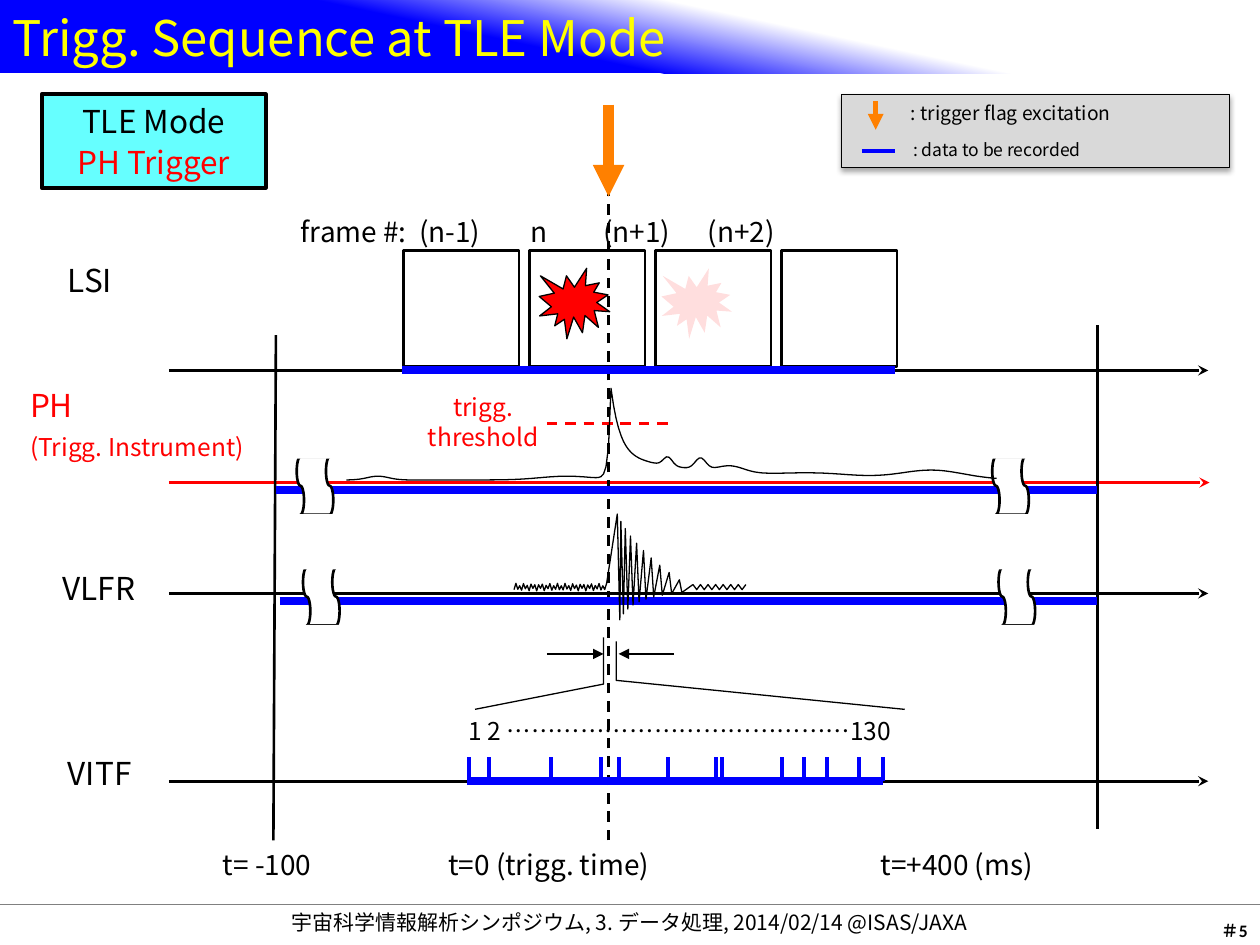
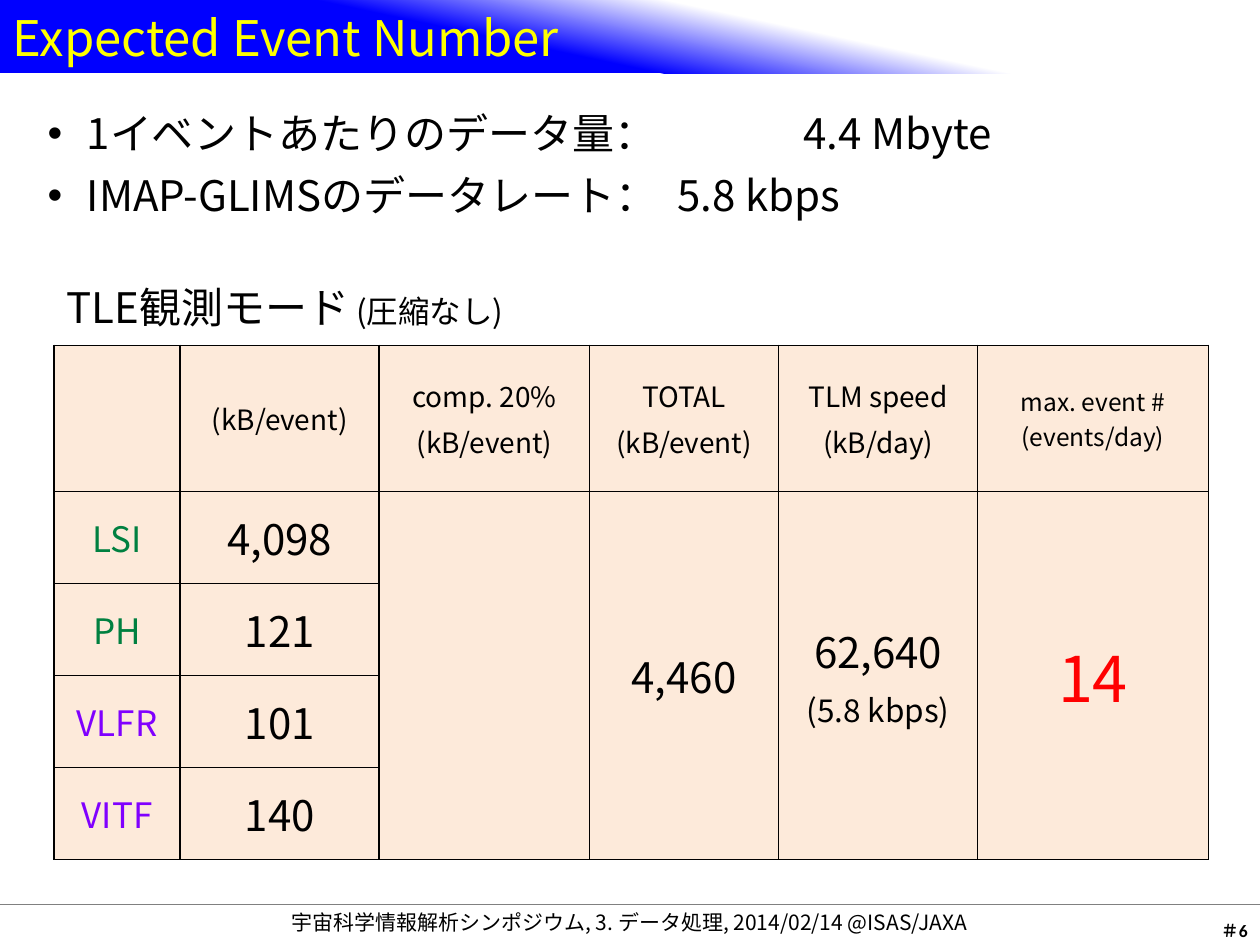
from math import exp, sin

from lxml import etree
from pptx import Presentation
from pptx.dml.color import RGBColor
from pptx.enum.dml import MSO_LINE
from pptx.enum.shapes import MSO_CONNECTOR, MSO_SHAPE
from pptx.enum.text import MSO_ANCHOR, PP_ALIGN
from pptx.oxml.ns import qn
from pptx.util import Inches, Pt

RECT, SEAL = MSO_SHAPE.RECTANGLE, MSO_SHAPE.EXPLOSION1
TAPE = MSO_SHAPE.FLOWCHART_PUNCHED_TAPE
STRAIGHT, DASH = MSO_CONNECTOR.STRAIGHT, MSO_LINE.DASH
LEFT, CENTER, RIGHT = PP_ALIGN.LEFT, PP_ALIGN.CENTER, PP_ALIGN.RIGHT
MIDDLE = MSO_ANCHOR.MIDDLE

FONT = "Noto Sans CJK JP"
LEAD = 1.22  # line height of a text box, as a share of the font size
BLACK, WHITE, RED, BLUE = "000000", "FFFFFF", "FF0000", "0000FF"
ORANGE, YELLOW, GREEN, PURPLE = "FF8000", "FFFF00", "008040", "8000FF"
PEACH, CYAN, GRAY, SILVER = "FDEADA", "66FFFF", "808080", "D9D9D9"
FOOTER = "宇宙科学情報解析シンポジウム, 3. データ処理, 2014/02/14 @ISAS/JAXA"
TITLES = {5: "Trigg. Sequence at TLE Mode", 6: "Expected Event Number"}
rgb = RGBColor.from_string


def paint(shape, fill, edge=None, width=0.75):
    """Give a shape a flat fill and line; None leaves either out."""
    shape.shadow.inherit = False
    if fill:
        shape.fill.solid()
        shape.fill.fore_color.rgb = rgb(fill)
    else:
        shape.fill.background()
    if edge:
        shape.line.color.rgb = rgb(edge)
        shape.line.width = Pt(width)
    else:
        shape.line.fill.background()


def write(frame, rows, align=LEFT, lead=LEAD, gap=0, face=FONT):
    """Fill a frame with rows of (text, size, colour), one paragraph each."""
    frame.word_wrap = True
    frame.text = "\n".join(row[0] for row in rows)
    for i, (para, (_, size, tint)) in enumerate(zip(frame.paragraphs, rows)):
        para.alignment = align
        if lead:
            para.line_spacing = Pt(round(size * lead, 1))
        if i and gap:
            para.space_before = Pt(gap)
        for run in para.runs:
            run.font.size = Pt(size)
            run.font.name = face
            run.font.color.rgb = rgb(tint)
            etree.SubElement(run.font._element, qn("a:ea"), typeface=face)


prs = Presentation()
prs.slide_width, prs.slide_height = Inches(10), Inches(7.5)

# Title band and footer on both slides
slides = []
for page, name in TITLES.items():
    slide = prs.slides.add_slide(prs.slide_layouts[5])
    shapes = slide.shapes
    slides.append(slide)

    number = shapes.add_textbox(Inches(7.19), Inches(7.25), Inches(2.81), Inches(0.27))
    write(number.text_frame, [(f"＃{page}", 10, BLACK)], RIGHT, face="Calibri")
    number.text_frame.paragraphs[0].runs[0].font.bold = True
    rule = shapes.add_connector(STRAIGHT, 0, Inches(7.18), Inches(10), Inches(7.18))
    rule.line.color.rgb = rgb(GRAY)
    rule.line.width = Pt(0.75)
    etree.SubElement(rule._element.spPr, qn("a:effectLst"))
    foot = shapes.add_textbox(Inches(0.33), Inches(7.17), Inches(9.33), Inches(0.3))
    write(foot.text_frame, [(FOOTER, 12, BLACK)], CENTER)

    band = shapes.add_shape(RECT, 0, 0, Inches(10), Inches(0.58))
    paint(band, None)
    band.fill.gradient()
    band.fill.gradient_angle = 78
    for stop, (spot, tint) in zip(band.fill.gradient_stops, [(0.41, BLUE), (0.63, WHITE)]):
        stop.position = spot
        stop.color.rgb = rgb(tint)

    title = shapes.title
    title.left, title.top = Inches(0), Inches(0)
    title.width, title.height = Inches(6.45), Inches(0.57)
    title.text_frame.vertical_anchor = MIDDLE
    write(title.text_frame, [(name, 28, YELLOW)])
    shapes._spTree.append(title._element)

# Slide 5: one time axis per instrument, all sharing the trigger time
shapes = slides[0].shapes
LSI, PH, VLFR, VITF = 2.94, 3.83, 4.71, 6.2  # heights of the axes
START, ZERO, END = 2.19, 4.83, 8.71          # t = -100, 0 and +400 ms

# Camera frames, with the flash and its afterglow
for i in range(4):
    box = shapes.add_shape(RECT, Inches(3.2 + i), Inches(1.99), Inches(0.92), Inches(0.92))
    paint(box, WHITE, BLACK, 1.5)
for x, edge in ((4.28, BLACK), (5.25, None)):
    flash = shapes.add_shape(SEAL, Inches(x), Inches(2.13), Inches(0.56), Inches(0.56))
    paint(flash, RED, edge)
glow = flash._element.spPr.find(qn("a:solidFill"))[0]
etree.SubElement(glow, qn("a:alpha"), val="13000")

mode = shapes.add_shape(RECT, Inches(0.33), Inches(0.75), Inches(1.78), Inches(0.74))
paint(mode, CYAN, BLACK, 2.25)
write(mode.text_frame, [("TLE Mode", 18, BLACK), ("PH Trigger", 18, RED)], CENTER, gap=1.8)

legend = shapes.add_shape(RECT, Inches(6.68), Inches(0.75), Inches(3.08), Inches(0.58))
paint(legend, SILVER, BLACK)
shade = etree.SubElement(
    legend._element.spPr.find(qn("a:effectLst")), qn("a:outerShdw"),
    blurRad=str(Pt(3.1)), dist=str(Pt(1.8)), dir="5400000", rotWithShape="0")
dark = etree.SubElement(shade, qn("a:srgbClr"), val=BLACK)
etree.SubElement(dark, qn("a:alpha"), val="35000")

# Straight lines as x1, y1, x2, y2, grouped by what they mean
axes = [(1.34, y, 9.59, y) for y in (LSI, VLFR, VITF)]
trigger = [(1.34, PH, 9.6, PH)]
limits = [(START, 2.66, START - 0.02, 6.67), (END, 2.58, END, 6.58)]
zero = [(ZERO, 6.67, ZERO, 1.42)]
level = [(4.34, 3.36, 5.35, 3.36)]
records = [(3.19, LSI, 7.1, LSI), (START, PH + 0.06, END, PH + 0.06),
           (START + 0.03, VLFR + 0.06, END, VLFR + 0.06), (3.71, VITF, 7.01, VITF)]
pulses = (3.72, 3.88, 4.37, 4.77, 4.91, 5.3, 5.68, 5.73, 6.21, 6.38, 6.56, 6.82, 7.01)
ticks = [(x, VITF - 0.19, x, VITF) for x in pulses]
flag = [(ZERO, 0.83, ZERO, 1.56)]
window = [(4.34, 5.19, 4.79, 5.19), (5.35, 5.19, 4.91, 5.19)]
keys = [(6.95, 0.8, 6.95, 1.03)], [(6.84, 1.2, 7.1, 1.2)]
styles = [
    (axes, BLACK, 1.5, "stealth", None),
    (trigger, RED, 1.5, "stealth", None),
    (zero, BLACK, 1.5, None, DASH),
    (limits, BLACK, 1.5, None, None),
    (level, RED, 1.5, None, DASH),
    (records, BLUE, 4.5, None, None),
    (ticks + keys[1], BLUE, 2.25, None, None),
    (flag, ORANGE, 6, "triangle", None),
    (keys[0], ORANGE, 3, "triangle", None),
    (window, BLACK, 0.75, "triangle", None),
]
for group, tint, width, head, dash in styles:
    for ends in group:
        wire = shapes.add_connector(STRAIGHT, *map(Inches, ends))
        wire.line.color.rgb = rgb(tint)
        wire.line.width = Pt(width)
        if dash:
            wire.line.dash_style = dash
        if head:
            etree.SubElement(wire.line._get_or_add_ln(), qn("a:tailEnd"), type=head)
        etree.SubElement(wire._element.spPr, qn("a:effectLst"))

# Breaks in the axes: a tape whose two ends are masked
for left, axis in ((2.27, PH), (2.32, VLFR)):
    for x in (left, left + 5.52):
        y = axis - 0.12
        tape = shapes.add_shape(TAPE, Inches(x), Inches(y), Inches(0.46), Inches(0.29))
        tape.rotation = 90
        paint(tape, WHITE, BLACK, 1.5)
        for dx, dy in ((0.01, -0.21), (0.08, 0.37)):
            mask = shapes.add_shape(RECT, Inches(x + dx), Inches(y + dy),
                                    Inches(0.43), Inches(0.14))
            paint(mask, WHITE)

# PH light curve: steep rise, fast and slow decay, and some low humps
PEAK, STEP = 4.85, 0.02
humps = [(3, 0.03, 0.12), (4.5, 0.03, 0.3), (5.3, 0.07, 0.05),  # centre, height, spread
         (5.56, 0.09, 0.06), (5.8, 0.05, 0.15), (6.5, 0.03, 0.4), (7.4, 0.07, 0.35)]
light = []
for i in range(259):
    x = 2.75 + i * STEP
    gap = x - PEAK
    if gap < 0:
        rise = 0.7 * exp(gap / 0.02)
    else:
        rise = 0.52 * exp(-gap / 0.07) + 0.2 * exp(-gap / 0.8)
    rise += sum(h * exp(-((x - mid) / w) ** 2) for mid, h, w in humps)
    light.append((x, PH - 0.02 - rise))

# VLFR radio wave: noise, a ringing burst that fades, noise again
REST = VLFR - 0.05
wave = []
for i in range(50):
    swing = 0.02 + 0.01 * sin(1.7 * i)
    wave.append((4.08 + 0.015 * i, REST + swing * (-1) ** i))
for n in range(10):
    x = 4.9 + 0.025 * n + 0.0033 * n * n
    wave += [(x, REST - 0.58 * (1 - n / 10)), (x + 0.02, REST + 0.26 * exp(-n / 5))]
for i in range(15):
    wave.append((5.5 + 0.03 * i, REST + 0.02 * (-1) ** (i + 1)))

# Guides that spread the short window over the counter bins
guides = [[(4.79, 5.06), (4.79, 5.43), (3.77, 5.63)],
          [(4.89, 5.09), (4.89, 5.4), (7.18, 5.63)]]
for trace in (*guides, light, wave):
    dots = [(Inches(x), Inches(y)) for x, y in trace]
    pen = shapes.build_freeform(*dots[0])
    pen.add_line_segments(dots[1:], close=False)
    paint(pen.convert_to_shape(), None, BLACK)

# Labels: top, size, then left, width and words of each label on that row
labels = [
    (1.65, 16, [(2.29, 1.2, "frame #:"), (3.23, 1, "(n-1)"), (4.11, 0.6, "n"),
                (4.69, 1, "(n+1)"), (5.52, 1, "(n+2)")]),
    (2.02, 18, [(0.44, 1.08, "LSI")]),
    (4.46, 18, [(0.4, 1.59, "VLFR")]),
    (5.93, 18, [(0.44, 1.59, "VITF")]),
    (5.63, 14, [(3.62, 4.05, "1 2 ……………………………………130")]),
    (6.67, 16, [(1.67, 1.5, "t= -100"), (3.46, 2.5, "t=0 (trigg. time)"),
                (6.89, 2.5, "t=+400 (ms)")]),
    (0.75, 11, [(7.13, 2.63, ": trigger flag excitation")]),
    (1.05, 10, [(7.15, 1.83, ": data to be recorded")]),
]
for top, size, row in labels:
    height = 0.1 + size * LEAD / 72
    for x, width, words in row:
        label = shapes.add_textbox(*map(Inches, (x, top, width, height)))
        write(label.text_frame, [(words, size, BLACK)])

tool = shapes.add_textbox(Inches(0.14), Inches(3.11), Inches(2.08), Inches(0.64)).text_frame
write(tool, [("PH", 18, RED), ("(Trigg. Instrument)", 14, RED)], gap=7)
for para in tool.paragraphs:
    para.line_spacing = Pt(14.6)
limit = shapes.add_textbox(Inches(3.27), Inches(3.06), Inches(1.13), Inches(0.57))
write(limit.text_frame, [("trigg.", 14, RED), ("threshold", 14, RED)], CENTER)

# Slide 6: event numbers
shapes = slides[1].shapes
rates = shapes.add_textbox(Inches(0.28), Inches(0.8), Inches(8.71), Inches(0.99)).text_frame
write(rates, [("1イベントあたりのデータ量：\t4.4 Mbyte", 24, BLACK),
              ("IMAP-GLIMSのデータレート：\t5.8 kbps", 24, BLACK)])
for para, stop in zip(rates.paragraphs, (6, 5)):
    para.space_after = Pt(6)
    props = para._p.get_or_add_pPr()
    props.set("marL", str(Inches(0.31)))
    props.set("indent", str(Inches(-0.31)))
    etree.SubElement(props, qn("a:buFont"), typeface="Arial")
    etree.SubElement(props, qn("a:buChar"), char="•")
    tabs = etree.SubElement(props, qn("a:tabLst"))
    etree.SubElement(tabs, qn("a:tab"), pos=str(Inches(stop)), algn="l")

head = shapes.add_textbox(Inches(0.43), Inches(2.18), Inches(4.2), Inches(0.5)).text_frame
write(head, [("TLE観測モード", 24, BLACK)])
note = head.paragraphs[0].add_run()
note.text = " (圧縮なし)"
note.font.size, note.font.name = Pt(18), FONT

cols, rows = (1, 1.58, 1.67, 1.5, 1.58, 1.83), (1.16, 0.73, 0.73, 0.73, 0.73)
table = shapes.add_table(5, 6, Inches(0.43), Inches(2.74), Inches(9.16), Inches(4.08)).table
table.first_row = table.horz_banding = False
for col, width in zip(table.columns, cols):
    col.width = Inches(width)
for row, height in zip(table.rows, rows):
    row.height = Inches(height)
for cell in table.iter_cells():
    for side in ("lnL", "lnR", "lnT", "lnB"):
        edge = etree.SubElement(cell._tc.get_or_add_tcPr(), qn(f"a:{side}"), w=str(Pt(1)))
        ink = etree.SubElement(edge, qn("a:solidFill"))
        etree.SubElement(ink, qn("a:srgbClr"), val=BLACK)
    cell.fill.solid()
    cell.fill.fore_color.rgb = rgb(PEACH)
    cell.vertical_anchor = MIDDLE
for c in range(2, 6):
    table.cell(1, c).merge(table.cell(4, c))

unit = ("(kB/event)", 16, BLACK)
cells = {
    (0, 1): [unit],
    (0, 2): [("comp. 20%", 16, BLACK), unit],
    (0, 3): [("TOTAL", 16, BLACK), unit],
    (0, 4): [("TLM speed", 16, BLACK), ("(kB/day)", 16, BLACK)],
    (0, 5): [("max. event # (events/day)", 14, BLACK)],
    (1, 3): [("4,460", 24, BLACK)],
    (1, 4): [("62,640", 24, BLACK), ("(5.8 kbps)", 18, BLACK)],
    (1, 5): [("14", 36, RED)],
}
loads = [("LSI", GREEN, "4,098"), ("PH", GREEN, "121"),
         ("VLFR", PURPLE, "101"), ("VITF", PURPLE, "140")]
for r, (name, tint, load) in enumerate(loads, 1):
    cells[r, 0] = [(name, 20, tint)]
    cells[r, 1] = [(load, 24, BLACK)]
for (r, c), words in cells.items():
    write(table.cell(r, c).text_frame, words, CENTER, lead=None, gap=3)

prs.save("out.pptx")
